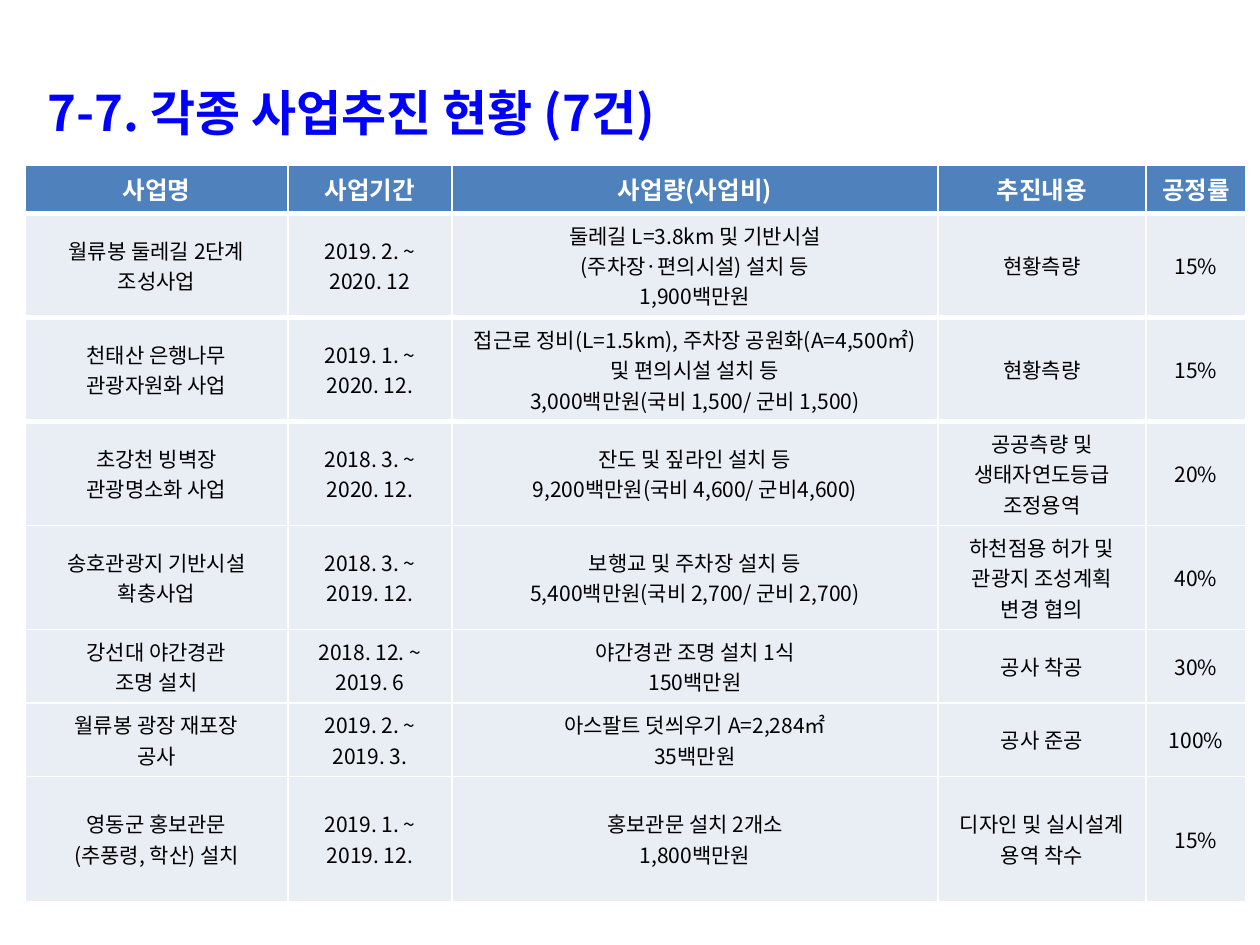
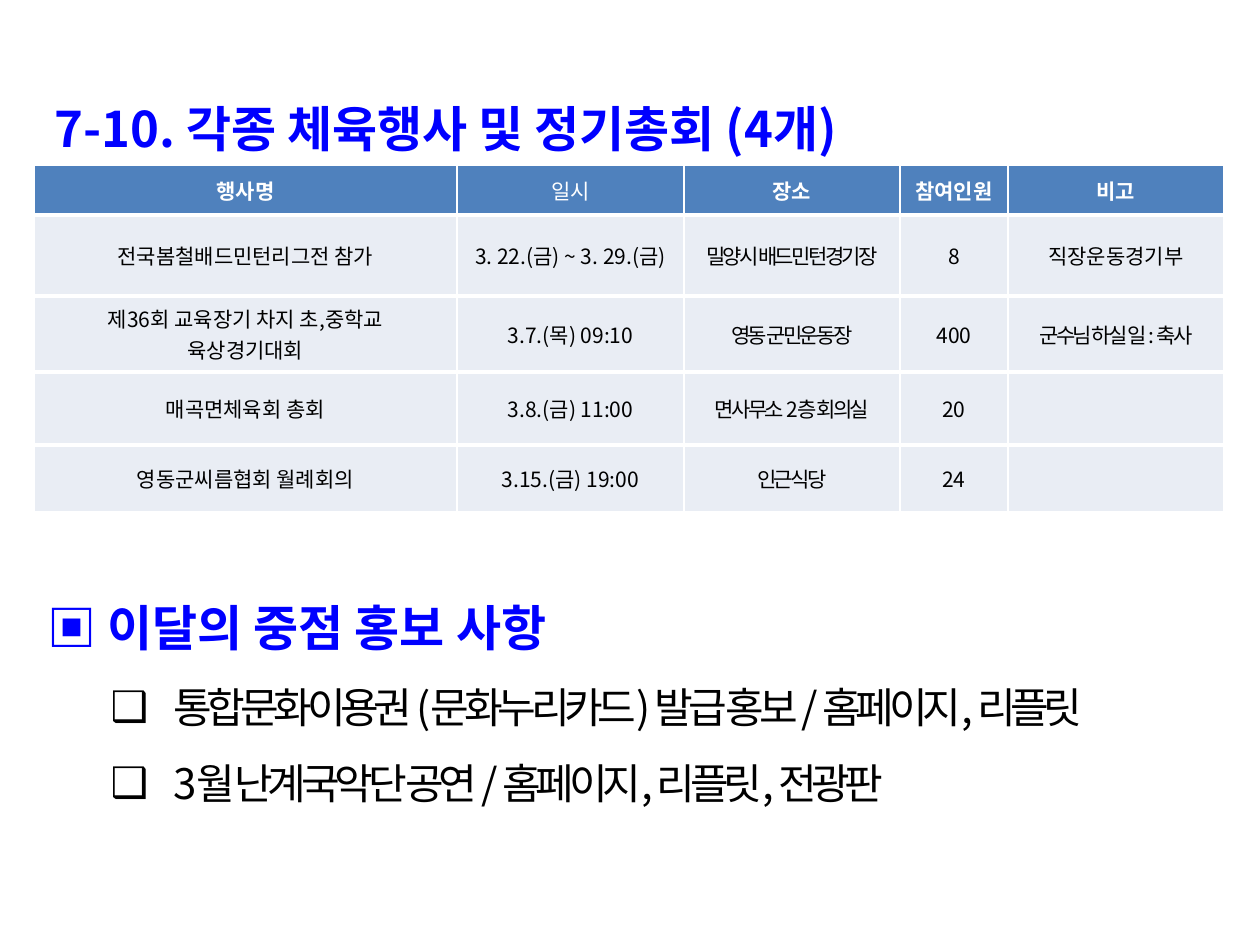
from lxml.etree import SubElement
from pptx import Presentation
from pptx.dml.color import RGBColor
from pptx.enum.text import MSO_ANCHOR, MSO_AUTO_SIZE, PP_ALIGN
from pptx.oxml.ns import qn
from pptx.util import Emu, Pt

PX = 914400 / 126
FONT = "Noto Sans CJK KR"
BLUE = RGBColor(0x00, 0x00, 0xFF)
BLACK = RGBColor(0x00, 0x00, 0x00)
WHITE = RGBColor(0xFF, 0xFF, 0xFF)
HEADER_FILL = RGBColor(0x4F, 0x81, 0xBD)
ROW_FILL = RGBColor(0xE9, 0xED, 0xF4)


def style_paragraph(paragraph, size, color, bold, alignment=PP_ALIGN.LEFT):
    paragraph.alignment = alignment
    font = paragraph.font
    font.size, font.bold, font.name = Pt(size), bold, FONT
    font.color.rgb = color
    SubElement(paragraph._p.pPr.find(qn("a:defRPr")), qn("a:ea"), typeface=FONT)


def add_status_table(slide, left, widths, heights, rows, header_size, thick_rules):
    """Horizontal rules 1 to thick_rules are 3 pt, all other borders 1 pt."""
    frame = slide.shapes.add_table(
        len(rows), len(widths), Emu(round(left * PX)), Emu(round(165 * PX)),
        Emu(round(sum(widths) * PX)), Emu(round(sum(heights) * PX)))
    table = frame.table
    for column, width in zip(table.columns, widths):
        column.width = Emu(round(width * PX))
    for index, (row, height) in enumerate(zip(table.rows, heights)):
        row.height = Emu(round(height * PX))
        header = index == 0
        top = 3 if 1 <= index <= thick_rules else 1
        bottom = 3 if index + 1 <= thick_rules else 1
        for cell, text in zip(row.cells, rows[index]):
            cell.text = text
            cell.vertical_anchor = MSO_ANCHOR.MIDDLE
            for side, weight in (("L", 1), ("R", 1), ("T", top), ("B", bottom)):
                line = SubElement(cell._tc.tcPr, qn(f"a:ln{side}"), w=str(Pt(weight)))
                SubElement(SubElement(line, qn("a:solidFill")), qn("a:srgbClr"), val=str(WHITE))
            cell.fill.solid()
            cell.fill.fore_color.rgb = HEADER_FILL if header else ROW_FILL
            for paragraph in cell.text_frame.paragraphs:
                style_paragraph(paragraph, header_size if header else 12,
                                WHITE if header else BLACK, header, PP_ALIGN.CENTER)
    return table


presentation = Presentation()
presentation.slide_width = Emu(round(1260 * PX))
presentation.slide_height = Emu(round(945 * PX))
project_slide = presentation.slides.add_slide(presentation.slide_layouts[5])
event_slide = presentation.slides.add_slide(presentation.slide_layouts[1])

# Titles and body: box, line spacing, then paragraphs as (text, margin, indent, size, colour, bold, bullet)
body = event_slide.placeholders[1]
text_blocks = [
    (project_slide.shapes.title, (35, 47, 720, 88), 1.5,
     [("7-7. 각종 사업추진 현황 (7건)", 73, -73, 28, BLUE, True, None)]),
    (event_slide.shapes.title, (34, 45, 1221, 100), 1.8,
     [("7-10. 각종 체육행사 및 정기총회 (4개)", 71, -63, 28, BLUE, True, None)]),
    (body, (35, 562, 1132, 297), 1.5,
     [("▣ 이달의 중점 홍보 사항", 0, 0, 28, BLUE, True, None),
      ("통합문화이용권 (문화누리카드) 발급 홍보 / 홈페이지, 리플릿", 126, -63, 24, BLACK, False, "❑"),
      ("3월 난계국악단 공연 / 홈페이지, 리플릿, 전광판", 126, -63, 24, BLACK, False, "❑")]),
]
for shape, box, line_spacing, lines in text_blocks:
    shape.left, shape.top, shape.width, shape.height = [Emu(round(side * PX)) for side in box]
    text_frame = shape.text_frame
    text_frame.text = "\n".join(line[0] for line in lines)
    text_frame.word_wrap = False
    text_frame.auto_size = MSO_AUTO_SIZE.NONE
    text_frame.vertical_anchor = MSO_ANCHOR.TOP
    for paragraph, line in zip(text_frame.paragraphs, lines):
        _, margin, indent, size, color, bold, bullet = line
        paragraph.level = 1 if bullet else 0
        properties = paragraph._p.get_or_add_pPr()
        properties.set("marL", str(round(margin * PX)))
        properties.set("indent", str(round(indent * PX)))
        if bullet:
            SubElement(SubElement(properties, qn("a:buClr")), qn("a:srgbClr"), val=str(BLACK))
            SubElement(properties, qn("a:buChar"), char=bullet)
            paragraph.runs[0]._r.get_or_add_rPr().set("spc", "-300")
        else:
            SubElement(properties, qn("a:buNone"))
        paragraph.line_spacing = line_spacing
        paragraph.space_before = Pt(0)
        style_paragraph(paragraph, size, color, bold)

# Project status table
project_rows = [
    ("사업명", "사업기간", "사업량(사업비)", "추진내용", "공정률"),
    ("월류봉 둘레길 2단계\n조성사업", "2019. 2. ~\n2020. 12",
     "둘레길 L=3.8km 및 기반시설\n(주차장·편의시설) 설치 등\n1,900백만원", "현황측량", "15%"),
    ("천태산 은행나무\n관광자원화 사업", "2019. 1. ~\n2020. 12.",
     "접근로 정비(L=1.5km), 주차장 공원화(A=4,500㎡) 및 편의시설 설치 등\n"
     "3,000백만원(국비 1,500/ 군비 1,500)", "현황측량", "15%"),
    ("초강천 빙벽장\n관광명소화 사업", "2018. 3. ~\n2020. 12.",
     "잔도 및 짚라인 설치 등\n9,200백만원(국비 4,600/ 군비4,600)",
     "공공측량 및\n생태자연도등급\n조정용역", "20%"),
    ("송호관광지 기반시설\n확충사업", "2018. 3. ~\n2019. 12.",
     "보행교 및 주차장 설치 등\n5,400백만원(국비 2,700/ 군비 2,700)",
     "하천점용 허가 및 관광지 조성계획\n변경 협의", "40%"),
    ("강선대 야간경관\n조명 설치", "2018. 12. ~\n2019. 6",
     "야간경관 조명 설치 1식\n150백만원", "공사 착공", "30%"),
    ("월류봉 광장 재포장\n공사", "2019. 2. ~\n2019. 3.",
     "아스팔트 덧씌우기 A=2,284㎡\n35백만원", "공사 준공", "100%"),
    ("영동군 홍보관문\n(추풍령, 학산) 설치", "2019. 1. ~\n2019. 12.",
     "홍보관문 설치 2개소\n1,800백만원", "디자인 및 실시설계 용역 착수", "15%"),
]
add_status_table(project_slide, 25, (263, 164, 486, 208, 100),
                 (40, 86, 86, 86, 86, 62, 62, 125), project_rows, 14, 3)

# Sports event table
event_rows = [
    ("행사명", "일시", "장소", "참여인원", "비고"),
    ("전국봄철배드민턴리그전 참가", "3. 22.(금) ~ 3. 29.(금)", "밀양시 배드민턴경기장", "8", "직장운동경기부"),
    ("제36회 교육장기 차지 초,중학교\n육상경기대회", "3.7.(목) 09:10", "영동 군민운동장", "400",
     "군수님 하실 일 : 축사"),
    ("매곡면체육회 총회", "3.8.(금) 11:00", "면사무소 2층 회의실", "20", ""),
    ("영동군씨름협회 월례회의", "3.15.(금) 19:00", "인근식당", "24", ""),
]
event_table = add_status_table(event_slide, 34, (423, 227, 216, 108, 216),
                               (50, 81, 76, 73, 68), event_rows, 12, 5)
event_table.cell(0, 1).text_frame.paragraphs[0].runs[0].font.bold = False

# Tightened letter spacing for the venues and the one long remark
for row, column in [(1, 2), (2, 2), (3, 2), (4, 2), (2, 4)]:
    run = event_table.cell(row, column).text_frame.paragraphs[0].runs[0]
    run._r.get_or_add_rPr().set("spc", "-150")

presentation.save("out.pptx")
